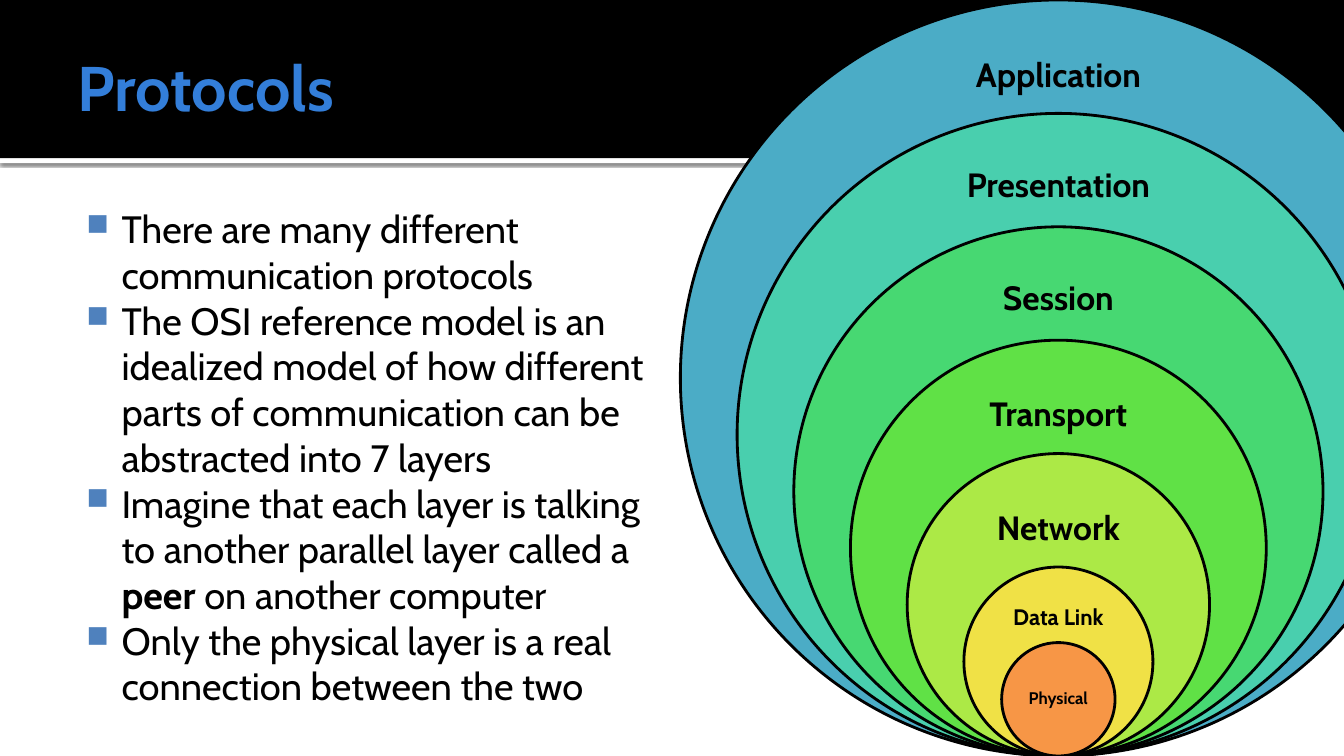
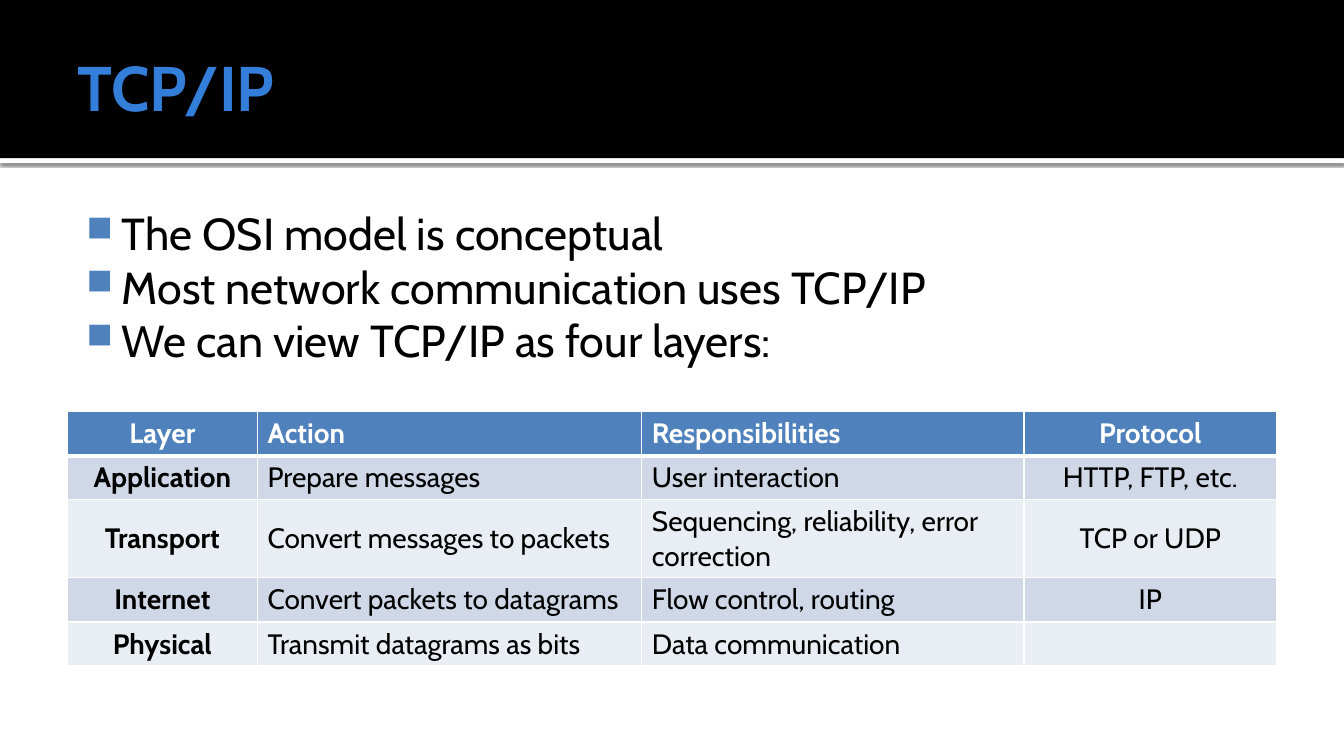
"""Build two slides on network protocols: the OSI layers and the TCP/IP layers."""
from lxml import etree
from pptx import Presentation
from pptx.dml.color import RGBColor
from pptx.enum.shapes import MSO_SHAPE
from pptx.enum.text import MSO_ANCHOR, PP_ALIGN
from pptx.oxml.ns import qn
from pptx.util import Pt

RECTANGLE, OVAL = MSO_SHAPE.RECTANGLE, MSO_SHAPE.OVAL
TOP, MIDDLE = MSO_ANCHOR.TOP, MSO_ANCHOR.MIDDLE
LEFT, CENTER = PP_ALIGN.LEFT, PP_ALIGN.CENTER

FONT = "Cabin"
BLACK, WHITE, TITLE_BLUE, ACCENT = "000000", "FFFFFF", "337ED9", "4F81BD"
ROW_FILLS = ["D0D8E8", "E9EDF4"]
WIDTH, HEIGHT = 960, 540
MARGIN, BAND_HEIGHT = 48, 113
CONTENT_WIDTH = WIDTH - 2 * MARGIN

color = RGBColor.from_string


def write(paragraph, text, size, hex_color, bold=False, align=LEFT):
    """Fill a paragraph; text between asterisks is bold."""
    paragraph.alignment = align
    for index, part in enumerate(text.split("*")):
        run = paragraph.add_run()
        run.text = part
        run.font.name = FONT
        run.font.size = Pt(size)
        run.font.bold = bold or index % 2 == 1
        run.font.color.rgb = color(hex_color)


def add_frame(slide, box, insets, anchor):
    """Add a wrapping text box and return its text frame."""
    frame = slide.shapes.add_textbox(*map(Pt, box)).text_frame
    frame.word_wrap = True
    frame.vertical_anchor = anchor
    frame.margin_left, frame.margin_top, frame.margin_right, frame.margin_bottom = map(Pt, insets)
    return frame


presentation = Presentation()
presentation.slide_width, presentation.slide_height = Pt(WIDTH), Pt(HEIGHT)

pages = [
    ("Protocols", 27.2, 438, [
        "There are many different communication protocols",
        "The OSI reference model is an idealized model of how different parts of "
        "communication can be abstracted into 7 layers",
        "Imagine that each layer is talking to another parallel layer called a "
        "*peer* on another computer",
        "Only the physical layer is a real connection between the two",
    ]),
    ("TCP/IP", 32, CONTENT_WIDTH, [
        "The OSI model is conceptual",
        "Most network communication uses TCP/IP",
        "We can view TCP/IP as four layers:",
    ]),
]

for title, body_size, body_width, bullets in pages:
    slide = presentation.slides.add_slide(presentation.slide_layouts[6])

    for top, height, fill in [(BAND_HEIGHT, 3.6, WHITE), (0, BAND_HEIGHT, BLACK)]:
        band = slide.shapes.add_shape(RECTANGLE, 0, Pt(top), Pt(WIDTH), Pt(height))
        band.shadow.inherit = False
        band.fill.solid()
        band.fill.fore_color.rgb = color(fill)
        band.line.fill.background()
        if fill == WHITE:
            effects = band.element.spPr.find(qn("a:effectLst"))
            shadow = etree.SubElement(effects, qn("a:outerShdw"), blurRad=str(Pt(2.5)),
                                      dist=str(Pt(0.8)), dir="5400000", rotWithShape="0")
            shadow_color = etree.SubElement(shadow, qn("a:srgbClr"), val=BLACK)
            etree.SubElement(shadow_color, qn("a:alpha"), val="60000")

    frame = add_frame(slide, (MARGIN, 12.2, CONTENT_WIDTH, 98.6), (7.2, 3.6, 3.6, 3.6), MIDDLE)
    write(frame.paragraphs[0], title, 45, TITLE_BLUE, bold=True)

    frame = add_frame(slide, (MARGIN, 139.7, body_width, 364.3), (4.3, 7.2, 7.2, 3.6), TOP)
    for index, bullet in enumerate(bullets):
        paragraph = frame.add_paragraph() if index else frame.paragraphs[0]
        write(paragraph, bullet, body_size, BLACK)
        properties = paragraph._p.get_or_add_pPr()
        properties.set("marL", str(Pt(34.56)))
        properties.set("indent", str(Pt(-25.2)))
        bullet_color = etree.SubElement(properties, qn("a:buClr"))
        etree.SubElement(bullet_color, qn("a:srgbClr"), val=ACCENT)
        etree.SubElement(properties, qn("a:buSzPct"), val="80000")
        etree.SubElement(properties, qn("a:buChar"), char="■")

protocols_slide, tcp_slide = presentation.slides

CIRCLE_CENTER, LABEL_WIDTH, LABEL_HEIGHT = 756, 200, 40
osi_layers = [
    ("Application", 540, "4BACC6", 24, 54.5),
    ("Presentation", 459, "49CFAE", 24, 133.5),
    ("Session", 378, "47D872", 24, 214),
    ("Transport", 297, "60E146", 24, 296.5),
    ("Network", 216, "ACE946", 24, 378),
    ("Data Link", 135, "F0E146", 16, 441.5),
    ("Physical", 81, "F79646", 12, 499.5),
]
for name, diameter, fill, size, label_middle in osi_layers:
    circle = protocols_slide.shapes.add_shape(
        OVAL, Pt(CIRCLE_CENTER - diameter / 2), Pt(HEIGHT - diameter), Pt(diameter), Pt(diameter))
    circle.shadow.inherit = False
    circle.fill.solid()
    circle.fill.fore_color.rgb = color(fill)
    circle.line.color.rgb = color(BLACK)
    circle.line.width = Pt(2)
    label_box = (CIRCLE_CENTER - LABEL_WIDTH / 2, label_middle - LABEL_HEIGHT / 2,
                 LABEL_WIDTH, LABEL_HEIGHT)
    label = add_frame(protocols_slide, label_box, (0, 0, 0, 0), MIDDLE).paragraphs[0]
    label.line_spacing = 0.9
    write(label, name, size, BLACK, bold=True, align=CENTER)

table_rows = [
    ("Layer", "Action", "Responsibilities", "Protocol"),
    ("Application", "Prepare messages", "User interaction", "HTTP, FTP, etc."),
    ("Transport", "Convert messages to packets",
     "Sequencing, reliability, error correction", "TCP or UDP"),
    ("Internet", "Convert packets to datagrams", "Flow control, routing", "IP"),
    ("Physical", "Transmit datagrams as bits", "Data communication", ""),
]
column_widths = [136, 274.5, 273, 180.5]
row_heights = [31.5, 31.5, 55.8, 31.5, 31.5]
column_alignments = [CENTER, LEFT, LEFT, CENTER]

table = tcp_slide.shapes.add_table(
    len(table_rows), len(column_widths), Pt(MARGIN), Pt(294),
    Pt(CONTENT_WIDTH), Pt(sum(row_heights))).table
for column, width in zip(table.columns, column_widths):
    column.width = Pt(width)
for row, height in zip(table.rows, row_heights):
    row.height = Pt(height)

for row_index, texts in enumerate(table_rows):
    is_header = row_index == 0
    border_widths = {"lnL": 1, "lnR": 1, "lnT": 3 if row_index == 1 else 1,
                     "lnB": 3 if is_header else 1}
    for column_index, text in enumerate(texts):
        cell = table.cell(row_index, column_index)
        cell.vertical_anchor = MIDDLE
        cell.fill.solid()
        cell.fill.fore_color.rgb = color(ACCENT if is_header else ROW_FILLS[(row_index - 1) % 2])
        if text:
            write(cell.text_frame.paragraphs[0], text, 20, WHITE if is_header else BLACK,
                  bold=is_header or column_index == 0, align=column_alignments[column_index])
        cell_properties = cell._tc.get_or_add_tcPr()
        for position, (side, width) in enumerate(border_widths.items()):
            border = etree.Element(qn(f"a:{side}"), w=str(Pt(width)))
            border_fill = etree.SubElement(border, qn("a:solidFill"))
            etree.SubElement(border_fill, qn("a:srgbClr"), val=WHITE)
            cell_properties.insert(position, border)

presentation.save("out.pptx")
